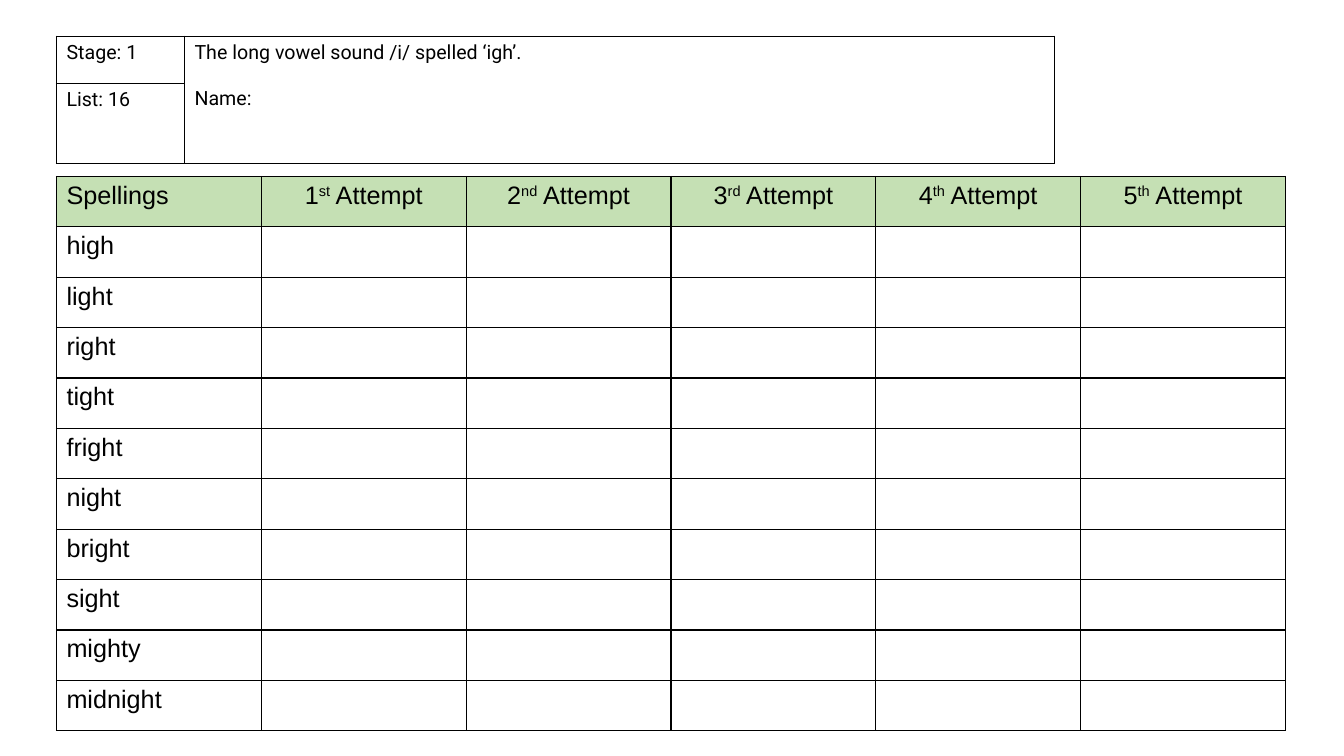
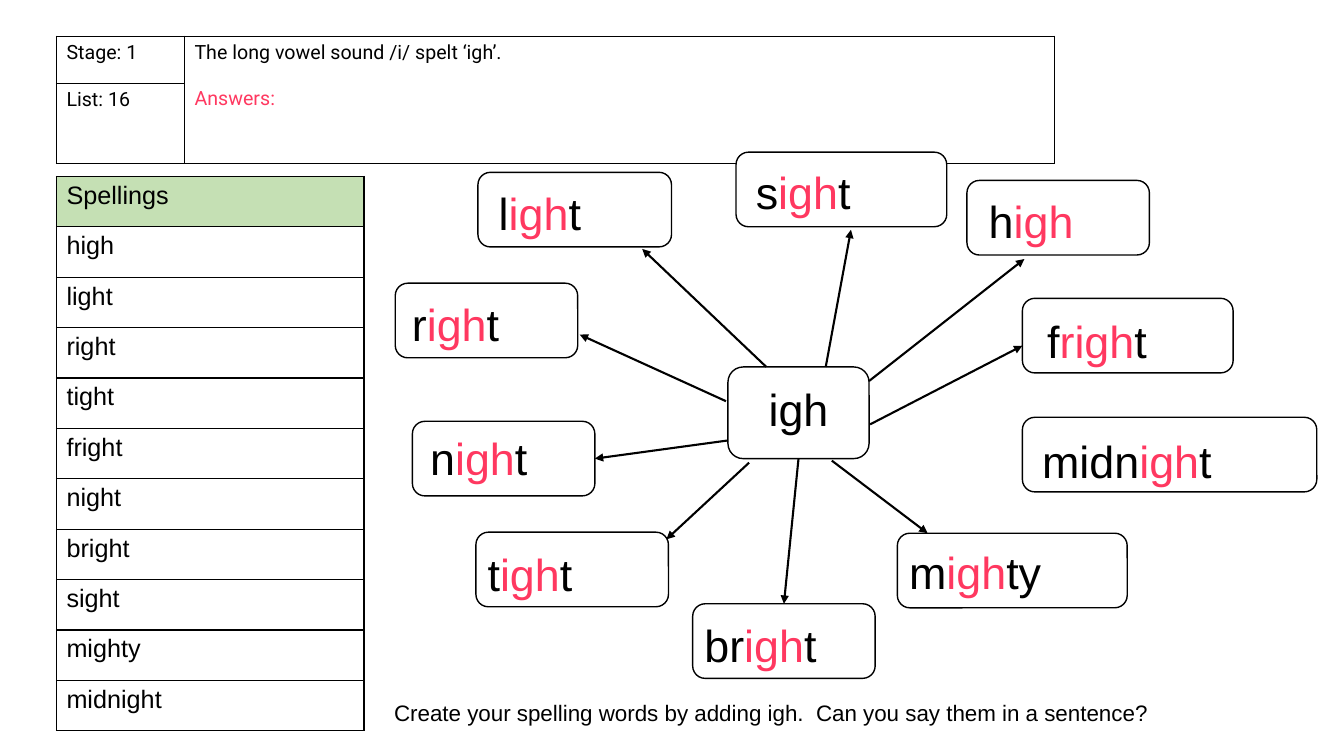
from dataclasses import dataclass
from typing import NamedTuple, Optional

from lxml.etree import SubElement
from pptx import Presentation
from pptx.dml.color import RGBColor
from pptx.enum.shapes import MSO_CONNECTOR as Connector
from pptx.enum.shapes import MSO_SHAPE as Preset
from pptx.enum.text import MSO_ANCHOR as Anchor
from pptx.enum.text import PP_ALIGN as Align
from pptx.oxml.ns import qn
from pptx.util import Inches, Pt


@dataclass(frozen=True)
class Theme:
    ink: RGBColor = RGBColor(0x00, 0x00, 0x00)
    paper: RGBColor = RGBColor(0xFF, 0xFF, 0xFF)
    accent: RGBColor = RGBColor(0xFF, 0x38, 0x60)
    heading_fill: RGBColor = RGBColor(0xC5, 0xE0, 0xB4)
    body_font: str = "Arial"
    header_font: str = "Roboto"
    header_size: int = 14
    table_size: int = 18
    card_size: int = 32
    prompt_size: int = 16
    border: float = 1
    arrow: float = 1.5


THEME = Theme()
LEFT = 0.56
ROW_HEIGHT = 0.5
CARD_HEIGHT = 0.74
WORDS = ("high", "light", "right", "tight", "fright",
         "night", "bright", "sight", "mighty", "midnight")
ORDINALS = (("1", "st"), ("2", "nd"), ("3", "rd"), ("4", "th"), ("5", "th"))


class Span(NamedTuple):
    text: str
    color: RGBColor = THEME.ink
    raised: bool = False


class Card(NamedTuple):
    word: str
    left: float
    top: float
    width: float
    text_left: float
    text_top: float
    stem: str = "igh"


class Arrow(NamedTuple):
    start: tuple[float, float]
    end: tuple[float, float]
    start_side: Optional[int] = None
    end_word: Optional[str] = None
    end_side: Optional[int] = None


CARDS = (
    Card("high", 9.59, 1.79, 1.81, 0.18, 0.1),
    Card("light", 4.74, 1.71, 1.92, 0.17, 0.1),
    Card("right", 3.92, 2.81, 1.81, 0.13, 0.1),
    Card("night", 4.09, 4.18, 1.81, 0.14, 0.06),
    Card("tight", 4.72, 5.28, 1.91, 0.08, 0.11),
    Card("bright", 6.87, 5.99, 1.81, 0.08, 0.1),
    Card("mighty", 8.9, 5.29, 2.28, 0.08, 0.08),
    Card("fright", 10.14, 2.96, 2.09, 0.21, 0.12, "righ"),
    Card("midnight", 10.14, 4.14, 2.92, 0.16, 0.13),
    Card("sight", 7.3, 1.51, 2.09, 0.16, 0.09),
)

ARROWS = (
    Arrow((8.19, 3.64), (8.44, 2.28)),
    Arrow((8.62, 3.78), (10.16, 2.57)),
    Arrow((8.63, 4.21), (10.14, 3.43)),
    Arrow((8.25, 4.57), (9.2, 5.29)),
    Arrow((7.6, 3.64), (6.37, 2.47)),
    Arrow((7.2, 3.98), (5.75, 3.32)),
    Arrow((7.22, 4.37), (5.89, 4.55), end_word="night", end_side=3),
    Arrow((7.43, 4.59), (6.61, 5.35)),
    Arrow((7.92, 4.55), (7.78, 5.99), 2, "bright", 0),
)


def write(para, spans, size: float, font: str = THEME.body_font, align=Align.LEFT) -> None:
    para.alignment = align
    for part in spans:
        span = para.add_run()
        span.text = part.text
        span.font.size = Pt(size)
        span.font.name = font
        span.font.color.rgb = part.color
        if part.raised:
            span._r.get_or_add_rPr().set("baseline", "30000")


def style_cell(cell, fill: Optional[RGBColor] = None) -> None:
    properties = cell._tc.get_or_add_tcPr()
    for side in ("a:lnL", "a:lnR", "a:lnT", "a:lnB"):
        line = SubElement(properties, qn(side), w=str(Pt(THEME.border)))
        solid = SubElement(line, qn("a:solidFill"))
        SubElement(solid, qn("a:srgbClr"), val=str(THEME.ink))
    if fill is None:
        cell.fill.background()
    else:
        cell.fill.solid()
        cell.fill.fore_color.rgb = fill


def add_grid(page, top: float, widths: list[float], heights: list[float]):
    frame = page.shapes.add_table(
        len(heights), len(widths), Inches(LEFT), Inches(top),
        Inches(sum(widths)), Inches(sum(heights)))
    table = frame.table
    table.first_row = table.horz_banding = False
    for column, width in zip(table.columns, widths):
        column.width = Inches(width)
    for row, height in zip(table.rows, heights):
        row.height = Inches(height)
    return table


def add_header(page, title: str, label: Span) -> None:
    table = add_grid(page, 0.36, [1.27, 8.63], [0.47, 0.79])
    for cell in table.iter_cells():
        style_cell(cell)
    size, font = THEME.header_size, THEME.header_font
    for row, text in enumerate(("Stage: 1", "List: 16")):
        write(table.cell(row, 0).text_frame.paragraphs[0], [Span(text)], size, font)
    topic = table.cell(0, 1)
    topic.merge(table.cell(1, 1))
    write(topic.text_frame.paragraphs[0], [Span(title)], size, font)
    para = topic.text_frame.add_paragraph()
    para.space_before = Pt(16.4)
    write(para, [label], size, font)


def add_spellings(page, widths: list[float]) -> None:
    table = add_grid(page, 1.75, widths, [ROW_HEIGHT] * (len(WORDS) + 1))
    for index, cell in enumerate(table.iter_cells()):
        style_cell(cell, THEME.heading_fill if index < len(widths) else None)
    for row, word in enumerate(("Spellings",) + WORDS):
        write(table.cell(row, 0).text_frame.paragraphs[0], [Span(word)], THEME.table_size)
    for column, (number, suffix) in enumerate(ORDINALS[:len(widths) - 1], start=1):
        write(table.cell(0, column).text_frame.paragraphs[0],
              [Span(number), Span(suffix, raised=True), Span(" Attempt")],
              THEME.table_size, align=Align.CENTER)


def add_box(page, left: float, top: float, width: float, height: float,
            spans: list[Span], inset: tuple[float, float], align=Align.LEFT):
    box = page.shapes.add_shape(Preset.ROUNDED_RECTANGLE, Inches(left), Inches(top),
                                Inches(width), Inches(height))
    box.shadow.inherit = False
    box.fill.solid()
    box.fill.fore_color.rgb = THEME.paper
    box.line.color.rgb = THEME.ink
    box.line.width = Pt(THEME.border)
    frame = box.text_frame
    frame.word_wrap = True
    frame.vertical_anchor = Anchor.TOP
    frame.margin_left, frame.margin_top = Inches(inset[0]), Inches(inset[1])
    frame.margin_right = frame.margin_bottom = 0
    write(frame.paragraphs[0], spans, THEME.card_size, align=align)
    return box


def add_card(page, card: Card):
    before, after = card.word.split(card.stem)
    spans = [Span(before), Span(card.stem, THEME.accent), Span(after)]
    return add_box(page, card.left, card.top, card.width, CARD_HEIGHT,
                   [span for span in spans if span.text], (card.text_left, card.text_top))


def add_arrow(page, arrow: Arrow, hub, boxes: dict) -> None:
    line = page.shapes.add_connector(
        Connector.STRAIGHT, *(Inches(value) for value in arrow.start + arrow.end))
    if arrow.start_side is not None:
        line.begin_connect(hub, arrow.start_side)
    if arrow.end_word is not None:
        line.end_connect(boxes[arrow.end_word], arrow.end_side)
    line.line.color.rgb = THEME.ink
    line.line.width = Pt(THEME.arrow)
    SubElement(line.line._get_or_add_ln(), qn("a:tailEnd"), type="triangle")
    SubElement(line._element.spPr, qn("a:effectLst"))


def add_prompt(page, text: str) -> None:
    box = page.shapes.add_textbox(Inches(3.81), Inches(6.89), Inches(9.61), Inches(0.37))
    box.text_frame.word_wrap = True
    write(box.text_frame.paragraphs[0], [Span(text)], THEME.prompt_size)


def build_practice(page) -> None:
    columns = len(ORDINALS) + 1
    add_spellings(page, [12.19 / columns] * columns)
    add_header(page, "The long vowel sound /i/ spelled ‘igh’.", Span("Name:"))


def build_answers(page) -> None:
    add_spellings(page, [3.05])
    add_header(page, "The long vowel sound /i/ spelt ‘igh’.", Span("Answers:", THEME.accent))
    hub = add_box(page, 7.22, 3.64, 1.4, 0.91, [Span("igh")], (0, 0.1), Align.CENTER)
    boxes = {card.word: add_card(page, card) for card in CARDS}
    for arrow in ARROWS:
        add_arrow(page, arrow, hub, boxes)
    add_prompt(page, "Create your spelling words by adding igh.  Can you say them in a sentence?")


def main() -> None:
    deck = Presentation()
    deck.slide_width, deck.slide_height = Inches(13.33), Inches(7.5)
    for build in (build_practice, build_answers):
        build(deck.slides.add_slide(deck.slide_layouts[6]))
    deck.save("out.pptx")


if __name__ == "__main__":
    main()
